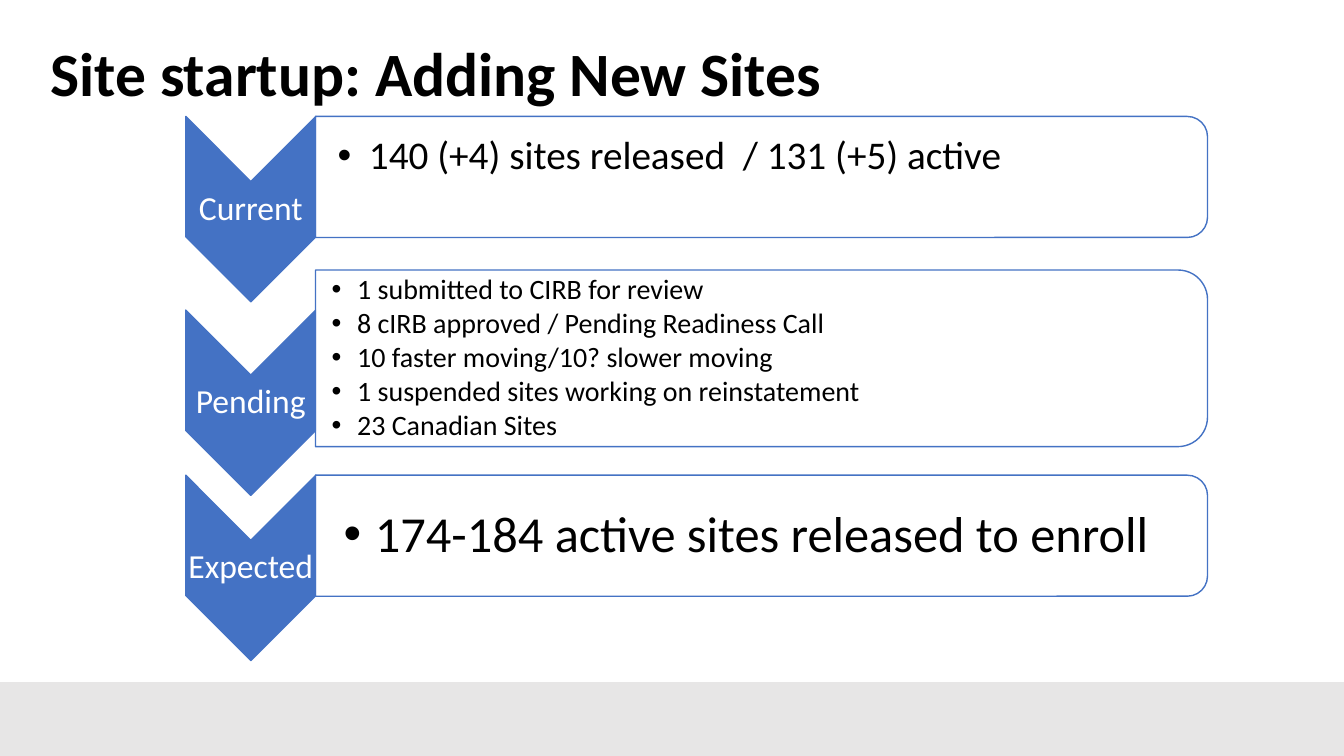
"""Build the site startup slide: three chevron stages with bulleted panels."""
from dataclasses import dataclass

from lxml.etree import SubElement
from pptx import Presentation
from pptx.dml.color import RGBColor as RGB
from pptx.enum.shapes import MSO_SHAPE as SHAPE
from pptx.enum.text import MSO_ANCHOR as ANCHOR, PP_ALIGN as ALIGN
from pptx.oxml.ns import qn
from pptx.util import Cm, Pt


@dataclass(frozen=True)
class Theme:
    font: str = "Calibri"
    black: RGB = RGB(0, 0, 0)
    white: RGB = RGB(255, 255, 255)
    blue: RGB = RGB(0x44, 0x72, 0xC4)
    band: RGB = RGB(0xE7, 0xE6, 0xE6)
    title: int = 44
    label: int = 24
    current: int = 28
    pending: int = 20
    expected: int = 36


T = Theme()


def add_shape(kind, cx, cy, w, h, fill, line=None, rotation=0):
    sp = s.shapes.add_shape(kind, Cm(cx - w / 2), Cm(cy - h / 2), Cm(w), Cm(h))
    sp.shadow.inherit = False
    sp.rotation = rotation
    sp.fill.solid()
    sp.fill.fore_color.rgb = fill
    if line is None:
        sp.line.fill.background()
    else:
        sp.line.color.rgb = line
        sp.line.width = Pt(1)
    return sp


def add_text(lines, box, size, color=T.black, bold=False, align=ALIGN.LEFT,
             insets=(0, 0), indent=0):
    tf = s.shapes.add_textbox(*map(Cm, box)).text_frame
    left, bottom = insets
    frame = {"word_wrap": True, "vertical_anchor": ANCHOR.MIDDLE,
             "margin_left": Cm(left), "margin_bottom": Cm(bottom),
             "margin_right": 0, "margin_top": 0}
    for name, value in frame.items():
        setattr(tf, name, value)
    for i, line in enumerate(lines):
        p = tf.paragraphs[0] if i == 0 else tf.add_paragraph()
        if indent:
            pPr = p._p.get_or_add_pPr()
            pPr.set("marL", str(Cm(indent)))
            pPr.set("indent", str(-Cm(indent)))
            SubElement(pPr, qn("a:buFont"), typeface="Arial")
            SubElement(pPr, qn("a:buChar"), char="•")
            p.space_after = Pt(2.7)
        p.alignment, p.line_spacing = align, 0.9
        r = p.add_run()
        r.text = line
        look = {"name": T.font, "size": Pt(size), "bold": bold}
        for name, value in look.items():
            setattr(r.font, name, value)
        r.font.color.rgb = color


prs = Presentation()
prs.slide_width, prs.slide_height = Cm(33.87), Cm(19.05)
s = prs.slides.add_slide(prs.slide_layouts[6])

add_shape(SHAPE.RECTANGLE, 33.87 / 2, 18.12, 33.87, 1.86, T.band)
add_text(["Site startup: Adding New Sites"], (1.02, 0.08, 26.67, 3.68),
         T.title, bold=True, insets=(0.25, 0))

CHEVRON_X, CHEVRON_LENGTH, CHEVRON_WIDTH = 6.32, 4.67, 3.28
PANEL_LEFT, PANEL_WIDTH = 7.95, 22.48

stages = [
    ("Current", 5.27, 4.46, 3.05, T.current, (0.56, 1), 0.79,
     ["140 (+4) sites released  / 131 (+5) active"]),
    ("Pending", 10.15, 9.03, 4.45, T.pending, (0.41, 0), 0.64,
     ["1 submitted to CIRB for review",
      "8 cIRB approved / Pending Readiness Call",
      "10 faster moving/10? slower moving",
      "1 suspended sites working on reinstatement",
      "23 Canadian Sites"]),
    ("Expected", 14.31, 13.5, 3.05, T.expected, (0.71, 0), 0.79,
     ["174-184 active sites released to enroll"]),
]

for label, chevron_y, panel_y, height, size, insets, indent, lines in stages:
    add_shape(SHAPE.CHEVRON, CHEVRON_X, chevron_y, CHEVRON_LENGTH,
              CHEVRON_WIDTH, T.blue, T.blue, 90)
    add_text([label], (CHEVRON_X - CHEVRON_WIDTH / 2, chevron_y - 0.7,
                       CHEVRON_WIDTH, 1.4), T.label, T.white,
             align=ALIGN.CENTER)
    panel = add_shape(SHAPE.ROUND_2_SAME_RECTANGLE,
                      PANEL_LEFT + PANEL_WIDTH / 2, panel_y, height,
                      PANEL_WIDTH, T.white, T.blue, 90)
    fill_color = panel.fill._xPr.find(qn("a:solidFill"))[0]
    SubElement(fill_color, qn("a:alpha"), val="90000")
    add_text(lines, (PANEL_LEFT, panel_y - height / 2, PANEL_WIDTH, height),
             size, insets=insets, indent=indent)

prs.save("out.pptx")
